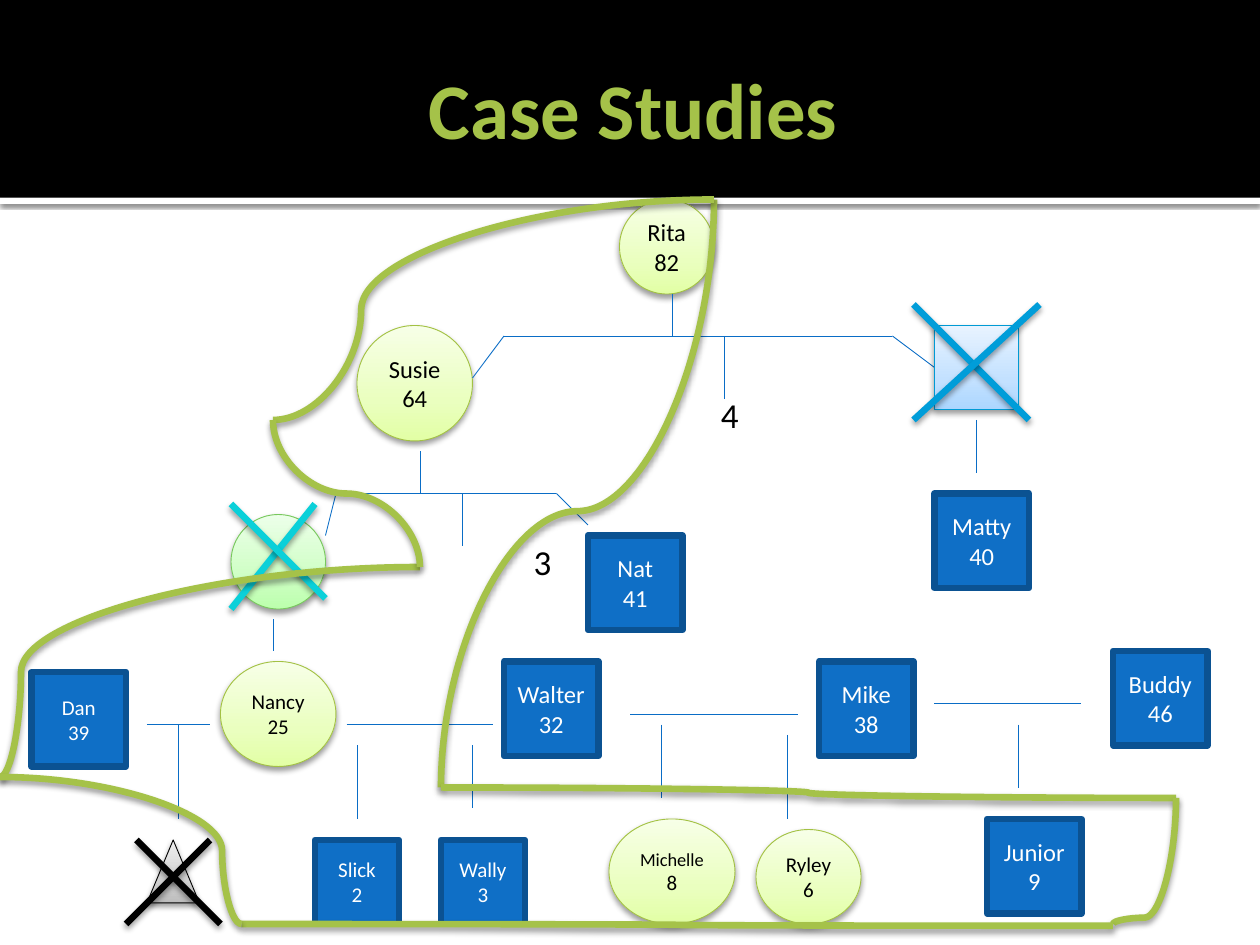
"""Build the Case Studies slide with a four-generation family genogram."""
import copy

import pptx
import pptx.dml.color
import pptx.enum.shapes
import pptx.enum.text
import pptx.oxml
import pptx.oxml.ns
import pptx.util
from lxml import etree

Pt = pptx.util.Pt
RGB = pptx.dml.color.RGBColor
SHAPE = pptx.enum.shapes.MSO_SHAPE
CONNECTOR = pptx.enum.shapes.MSO_CONNECTOR
CENTER = pptx.enum.text.PP_ALIGN.CENTER
MIDDLE = pptx.enum.text.MSO_ANCHOR.MIDDLE
qn = pptx.oxml.ns.qn

FONT = "Calibri"
BLACK = RGB(0x00, 0x00, 0x00)
WHITE = RGB(0xFF, 0xFF, 0xFF)
GREEN = RGB(0xA5, 0xC2, 0x49)
BLUE = RGB(0x0F, 0x6F, 0xC6)
NAVY = RGB(0x0B, 0x52, 0x92)
LINK = RGB(0x0A, 0x6D, 0xC6)
SKY = RGB(0x00, 0x9D, 0xD9)
TEAL = RGB(0x0B, 0xD0, 0xD9)
SKY_EDGE = RGB(0x00, 0x9A, 0xD4)
LIME_EDGE = RGB(0xA3, 0xC1, 0x44)
MINT_EDGE = RGB(0x78, 0xC8, 0x5D)
LIME_FADE = RGB(0xE2, 0xFF, 0xA5), RGB(0xEA, 0xFF, 0xBF), RGB(0xF7, 0xFF, 0xE7)
MINT_FADE = RGB(0xBC, 0xFF, 0xAD), RGB(0xCF, 0xFF, 0xC5), RGB(0xEC, 0xFF, 0xE9)
SKY_FADE = RGB(0xAB, 0xD6, 0xFF), RGB(0xC3, 0xE1, 0xFF), RGB(0xE8, 0xF3, 0xFF)
GRAY_FADE = RGB(0xBD, 0xBD, 0xBD), RGB(0xD1, 0xD1, 0xD1), RGB(0xEE, 0xEE, 0xEE)
THIN, THICK = 0.5, 3.78
SOFT_SHADOW = 38, 3.5, 2
BAR_SHADOW = 60, 2.5, 0.8

MEN = [
    ("Dan", "39", 18, 384, 54, 12),
    ("Matty", "40", 534, 282, 54, 14),
    ("Nat", "41", 336, 306, 54, 14),
    ("Mike", "38", 468, 378, 54, 14),
    ("Walter", "32", 288, 378, 54, 14),
    ("Wally", "3", 252, 480, 48, 12),
    ("Slick", "2", 180, 480, 48, 12),
    ("Buddy", "46", 636, 372, 54, 14),
    ("Junior", "9", 564, 468, 54, 14),
]
WOMEN = [
    ("Rita", "82", (354, 114, 54, 54), (14, 14)),
    ("Nancy", "25", (126, 378, 66, 60), (12, 12)),
    ("Ryley", "6", (432, 474, 60, 54), (12, 12)),
    ("Susie", "64", (204, 186, 66, 66), (14, 14)),
    ("Michelle", "8", (348, 468, 72, 60), (10.5, 12)),
]
DECEASED = [
    (SHAPE.OVAL, (132, 294, 54, 54), MINT_FADE, MINT_EDGE, TEAL,
     [(180, 288, 132, 348), (132, 288, 186, 342)]),
    (SHAPE.RECTANGLE, (534, 186, 48, 48), SKY_FADE, SKY_EDGE, SKY,
     [(522, 174, 588, 240), (594, 174, 522, 240)]),
    (SHAPE.ISOSCELES_TRIANGLE, (84, 480, 30, 36), GRAY_FADE, BLACK, BLACK,
     [(78, 480, 126, 528), (120, 480, 72, 528)]),
]
COUNTS = [("4", 405, 225), ("3", 298, 309)]
FAMILY_LINKS = [
    (288, 192, 510, 192), (192, 282, 318, 282), (198, 414, 282, 414),
    (360, 408, 456, 408), (534, 402, 618, 402), (84, 414, 120, 414),
    (204, 426, 204, 468), (582, 414, 582, 450), (450, 420, 450, 468),
    (558, 240, 558, 270), (378, 414, 378, 456), (270, 426, 270, 462),
    (318, 282, 336, 300), (192, 282, 186, 306), (240, 258, 240, 282),
    (288, 192, 270, 216), (510, 192, 534, 210), (156, 354, 156, 372),
    (384, 168, 384, 192), (414, 192, 414, 228), (264, 282, 264, 312),
    (102, 414, 102, 468),
]
HOUSEHOLD = [
    ((408, 114, 252, 450), True, 0.53),
    ((252, 450, 672, 456), False, 0.5),
    ((672, 456, 636, 528), True, 0.95),
    ((138, 528, 636, 529), False, 0.5),
    ((156, 240, 408, 114), False, 0.2),
    ((240, 324, 0, 444), False, 0.95),
    ((0, 444, 138, 528), False, 0.92),
    ((156, 240, 240, 324), True, 0.5),
]


def set_shadow(item, shadow=None):
    properties = item._element.spPr
    for old in properties.findall(qn("a:effectLst")):
        properties.remove(old)
    effects = etree.SubElement(properties, qn("a:effectLst"))
    if shadow:
        opacity, blur, distance = shadow
        outer = etree.SubElement(
            effects, qn("a:outerShdw"), blurRad=str(Pt(blur)), dist=str(Pt(distance)),
            dir="5400000", rotWithShape="0")
        color = etree.SubElement(outer, qn("a:srgbClr"), val=str(BLACK))
        etree.SubElement(color, qn("a:alpha"), val=str(opacity * 1000))


def add_figure(page, kind, frame, fill, edge=None, width=THIN, shadow=None):
    shape = page.shapes.add_shape(kind, *map(Pt, frame))
    if isinstance(fill, RGB):
        shape.fill.solid()
        shape.fill.fore_color.rgb = fill
    else:
        shape.fill.gradient()
        shape.fill.gradient_angle = 90
        stops = shape._element.spPr.find(".//" + qn("a:gsLst"))
        stops.insert(1, copy.deepcopy(stops[0]))
        for stop, place, color in zip(shape.fill.gradient_stops, (0, 0.35, 1), fill):
            stop.position = place
            stop.color.rgb = color
    if edge is None:
        shape.line.fill.background()
    else:
        shape.line.color.rgb = edge
        shape.line.width = Pt(width)
    set_shadow(shape, shadow)
    return shape


def write(box, lines, sizes, color, bold=False):
    frame = box.text_frame
    frame.word_wrap = True
    frame.vertical_anchor = MIDDLE
    frame.text = "\n".join(lines)
    for para, size in zip(frame.paragraphs, sizes):
        para.alignment = CENTER
        para.font.name = FONT
        para.font.size = Pt(size)
        para.font.bold = bold
        para.font.color.rgb = color


def add_line(page, ends, color, width, shadow=None, kind=CONNECTOR.STRAIGHT):
    line = page.shapes.add_connector(kind, *map(Pt, ends))
    line.line.color.rgb = color
    line.line.width = Pt(width)
    set_shadow(line, shadow)
    return line


def add_curve(page, ends, starts_down, bend):
    if starts_down:
        x1, y1, x2, y2 = ends
        middle_x, middle_y = (x1 + x2) / 2, (y1 + y2) / 2
        half_run, half_drop = (x2 - x1) / 2, (y2 - y1) / 2
        ends = (middle_x - half_drop, middle_y + half_run,
                middle_x + half_drop, middle_y - half_run)
    curve = add_line(page, ends, GREEN, THICK, SOFT_SHADOW, CONNECTOR.CURVE)
    properties = curve._element.spPr
    if starts_down:
        properties.find(qn("a:xfrm")).set("rot", "5400000")
    guides = properties.find(".//" + qn("a:avLst"))
    etree.SubElement(guides, qn("a:gd"), name="adj1", fmla=f"val {round(bend * 100000)}")


def main():
    deck = pptx.Presentation()
    deck.slide_width, deck.slide_height = Pt(720), Pt(540)
    page = deck.slides.add_slide(deck.slide_layouts[5])

    add_figure(page, SHAPE.RECTANGLE, (0, 113, 720, 3.6), WHITE, shadow=BAR_SHADOW)
    add_figure(page, SHAPE.RECTANGLE, (0, 0, 720, 113), BLACK)
    title = page.shapes.title
    page.shapes._spTree.append(title._element)
    title.left, title.top, title.width, title.height = map(Pt, (36, 12.5, 648, 98.5))
    title.text_frame.margin_right = Pt(3.6)
    write(title, ["Case Studies"], [45], GREEN, bold=True)

    for count, left, top in COUNTS:
        box = page.shapes.add_textbox(*map(Pt, (left, top, 24, 24)))
        frame = box.text_frame
        frame.margin_left = frame.margin_right = frame.margin_top = frame.margin_bottom = 0
        write(box, [count], [20], BLACK)
    for name, age, left, top, side, size in MEN:
        box = add_figure(page, SHAPE.RECTANGLE, (left, top, side, side), BLUE, NAVY, THICK)
        write(box, [name, age], [size, size], WHITE)
    for name, age, frame, sizes in WOMEN:
        box = add_figure(page, SHAPE.OVAL, frame, LIME_FADE, LIME_EDGE, shadow=SOFT_SHADOW)
        write(box, [name, age], sizes, BLACK)
    for ends in FAMILY_LINKS:
        add_line(page, ends, LINK, THIN)
    for kind, frame, fade, edge, cross_color, strokes in DECEASED:
        add_figure(page, kind, frame, fade, edge, shadow=SOFT_SHADOW)
        for ends in strokes:
            add_line(page, ends, cross_color, THICK, SOFT_SHADOW)
    for ends, starts_down, bend in HOUSEHOLD:
        add_curve(page, ends, starts_down, bend)

    deck.save("out.pptx")


if __name__ == "__main__":
    main()
